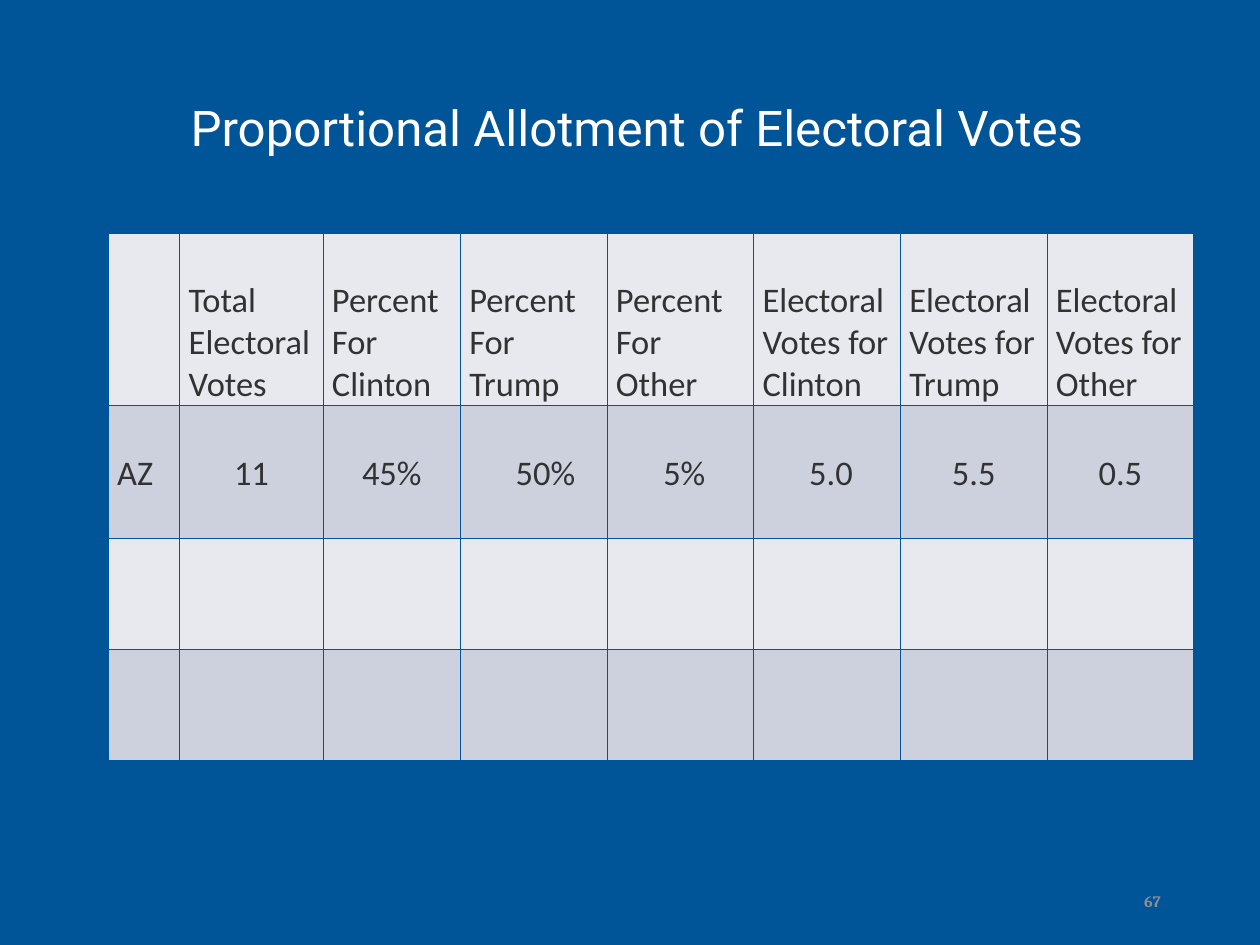
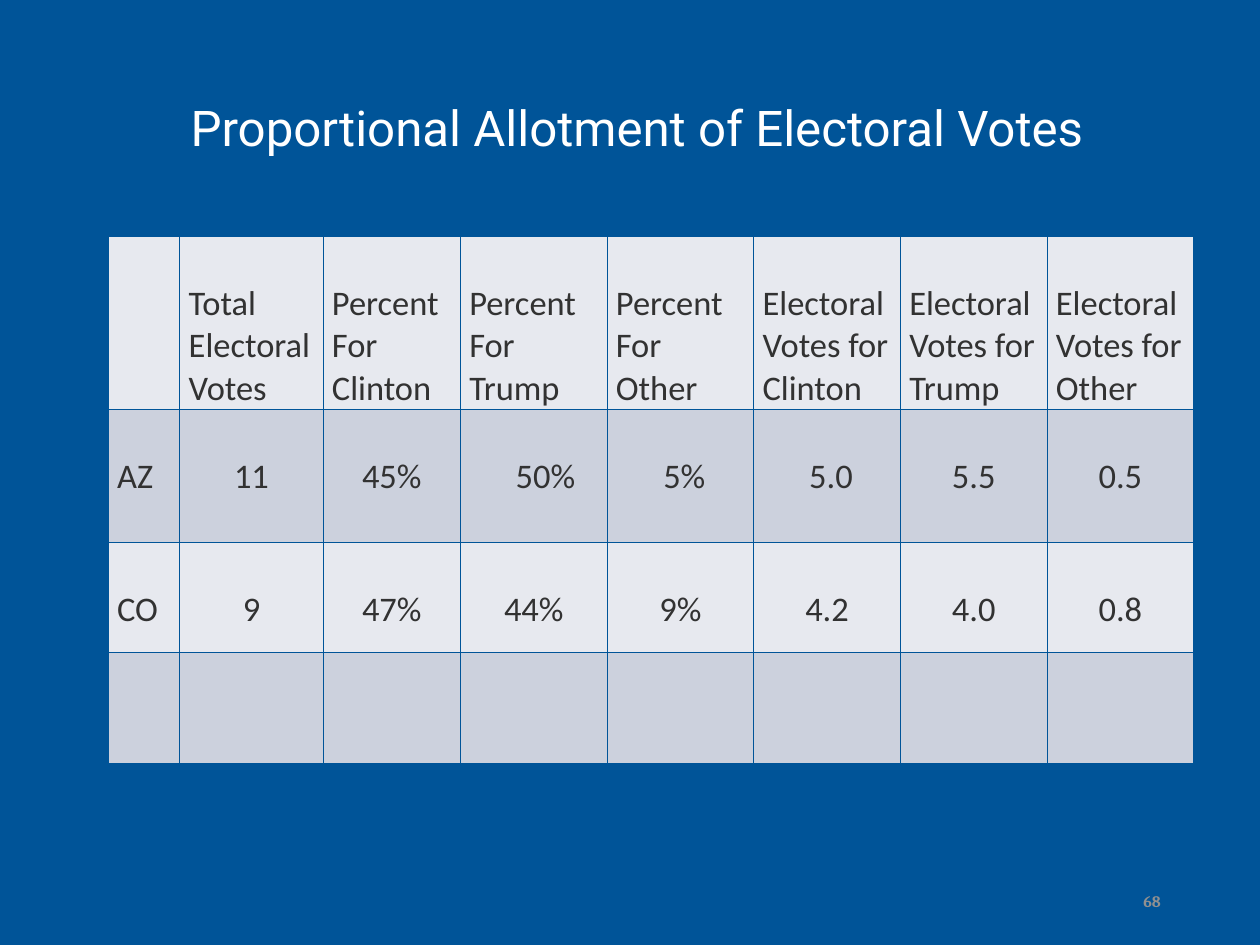
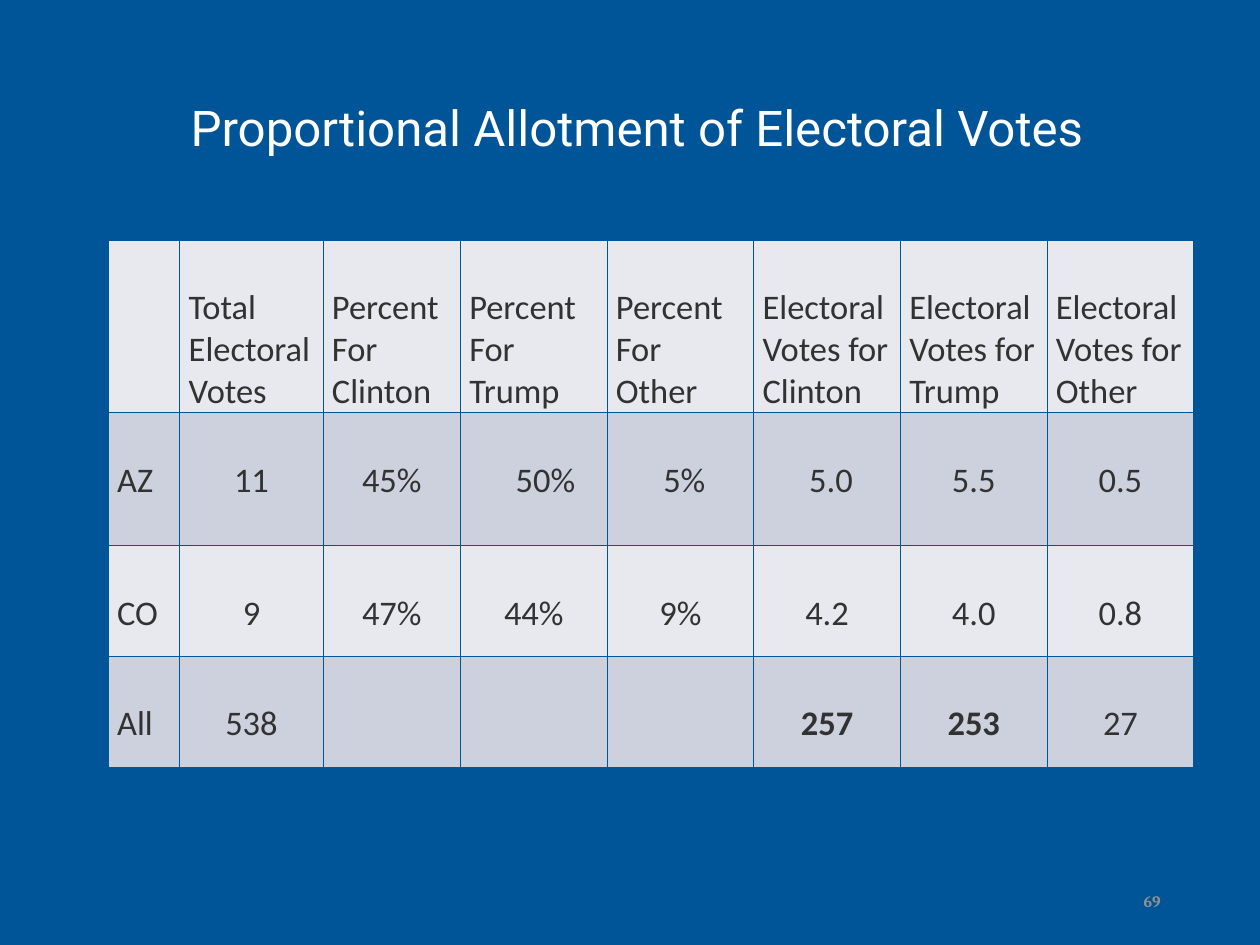
from dataclasses import dataclass

from lxml.etree import SubElement
from pptx import Presentation
from pptx.dml.color import RGBColor
from pptx.enum.text import MSO_ANCHOR, MSO_AUTO_SIZE, PP_ALIGN
from pptx.oxml.ns import qn
from pptx.slide import Slide
from pptx.table import _Cell
from pptx.text.text import TextFrame
from pptx.util import Pt


@dataclass(frozen=True)
class TextStyle:
    font: str
    size: float
    color: str


@dataclass(frozen=True)
class Theme:
    background: str = "005498"
    bands: tuple[str, str] = ("E7E9EF", "CCD1DD")
    title: TextStyle = TextStyle("Roboto", 40, "FFFFFF")
    cell: TextStyle = TextStyle("Calibri", 28, "323232")
    number: TextStyle = TextStyle("Cambria", 13, "909090")


@dataclass(frozen=True)
class Entry:
    text: str = ""
    bold: bool = False
    indent: float = 0


@dataclass(frozen=True)
class TableSlide:
    number: int
    top: float
    filled_rows: int


THEME = Theme()
TITLE = "Proportional Allotment of Electoral Votes"
TABLE_LEFT = 88
COL_WIDTHS = [58.2, 116.4, 111.6] + [119.2] * 5
ROW_HEIGHTS = [140.4, 108, 90, 90]
CELL_TOP_MARGIN = 37.8
CELL_SIDE_MARGIN = 7.2

HEADER = [
    Entry(),
    Entry("Total\nElectoral\nVotes"),
    Entry("Percent\nFor Clinton"),
    Entry("Percent\nFor Trump"),
    Entry("Percent\nFor\nOther"),
    Entry("Electoral Votes for Clinton"),
    Entry("Electoral Votes for Trump"),
    Entry("Electoral Votes for Other"),
]
RESULTS = [
    [Entry("AZ"), Entry("11"), Entry("45%"), Entry("50%", indent=19),
     Entry("5%", indent=6.3), Entry("5.0", indent=6.3), Entry("5.5"), Entry("0.5")],
    [Entry(text) for text in ("CO", "9", "47%", "44%", "9%", "4.2", "4.0", "0.8")],
    [Entry("All"), Entry("538"), Entry(), Entry(), Entry(),
     Entry("257", bold=True), Entry("253", bold=True), Entry("27")],
]
SLIDES = [TableSlide(67 + i, 189.36 + 2.88 * i, 1 + i) for i in range(3)]


def write_text(tf: TextFrame, text: str, style: TextStyle,
               align: PP_ALIGN, bold: bool = False) -> None:
    """Write each line of the text as one paragraph with one run."""
    for i, line in enumerate(text.split("\n")):
        p = tf.add_paragraph() if i else tf.paragraphs[0]
        p.alignment = align
        r = p.add_run()
        r.text = line
        r.font.name = style.font
        r.font.size = Pt(style.size)
        r.font.bold = bold
        r.font.color.rgb = RGBColor.from_string(style.color)


def add_title(s: Slide) -> None:
    tf = s.shapes.add_textbox(Pt(147.6), Pt(75.6), Pt(740), Pt(55.4)).text_frame
    tf.word_wrap = False
    tf.auto_size = MSO_AUTO_SIZE.SHAPE_TO_FIT_TEXT
    write_text(tf, TITLE, THEME.title, PP_ALIGN.CENTER)


def add_number(s: Slide, number: int) -> None:
    tf = s.shapes.add_textbox(Pt(722.9), Pt(712), Pt(230.4), Pt(41)).text_frame
    tf.word_wrap = True
    tf.vertical_anchor = MSO_ANCHOR.MIDDLE
    tf.margin_left = tf.margin_right = Pt(10)
    tf.margin_top = tf.margin_bottom = Pt(5)
    write_text(tf, str(number), THEME.number, PP_ALIGN.RIGHT, bold=True)


def set_borders(cell: _Cell) -> None:
    tc_pr = cell._tc.get_or_add_tcPr()
    for side in ("L", "R", "T", "B"):
        ln = SubElement(tc_pr, qn(f"a:ln{side}"), w=str(Pt(1)))
        fill = SubElement(ln, qn("a:solidFill"))
        SubElement(fill, qn("a:srgbClr"), val=THEME.background)


def style_cell(cell: _Cell, band: str) -> None:
    set_borders(cell)
    cell.fill.solid()
    cell.fill.fore_color.rgb = RGBColor.from_string(band)
    cell.margin_left = cell.margin_right = Pt(CELL_SIDE_MARGIN)
    cell.margin_top = Pt(CELL_TOP_MARGIN)
    cell.margin_bottom = 0


def add_results_table(s: Slide, top: float, filled_rows: int) -> None:
    entries = [HEADER, *RESULTS[:filled_rows]]
    table = s.shapes.add_table(
        len(ROW_HEIGHTS), len(COL_WIDTHS), Pt(TABLE_LEFT), Pt(top),
        Pt(sum(COL_WIDTHS)), Pt(sum(ROW_HEIGHTS))).table
    table.first_row = table.horz_banding = False
    for column, width in zip(table.columns, COL_WIDTHS):
        column.width = Pt(width)
    for i, height in enumerate(ROW_HEIGHTS):
        table.rows[i].height = Pt(height)
        for j in range(len(COL_WIDTHS)):
            cell = table.cell(i, j)
            style_cell(cell, THEME.bands[i % 2])
            entry = entries[i][j] if i < len(entries) else Entry()
            if entry.text:
                cell.margin_left = Pt(CELL_SIDE_MARGIN + entry.indent)
                align = PP_ALIGN.LEFT if i == 0 or j == 0 else PP_ALIGN.CENTER
                write_text(cell.text_frame, entry.text, THEME.cell, align, entry.bold)


def main() -> None:
    prs = Presentation()
    prs.slide_width, prs.slide_height = Pt(1024), Pt(768)
    background = prs.slide_master.background.fill
    background.solid()
    background.fore_color.rgb = RGBColor.from_string(THEME.background)
    for page in SLIDES:
        s = prs.slides.add_slide(prs.slide_layouts[6])
        add_title(s)
        add_results_table(s, page.top, page.filled_rows)
        add_number(s, page.number)
    prs.save("out.pptx")


if __name__ == "__main__":
    main()
